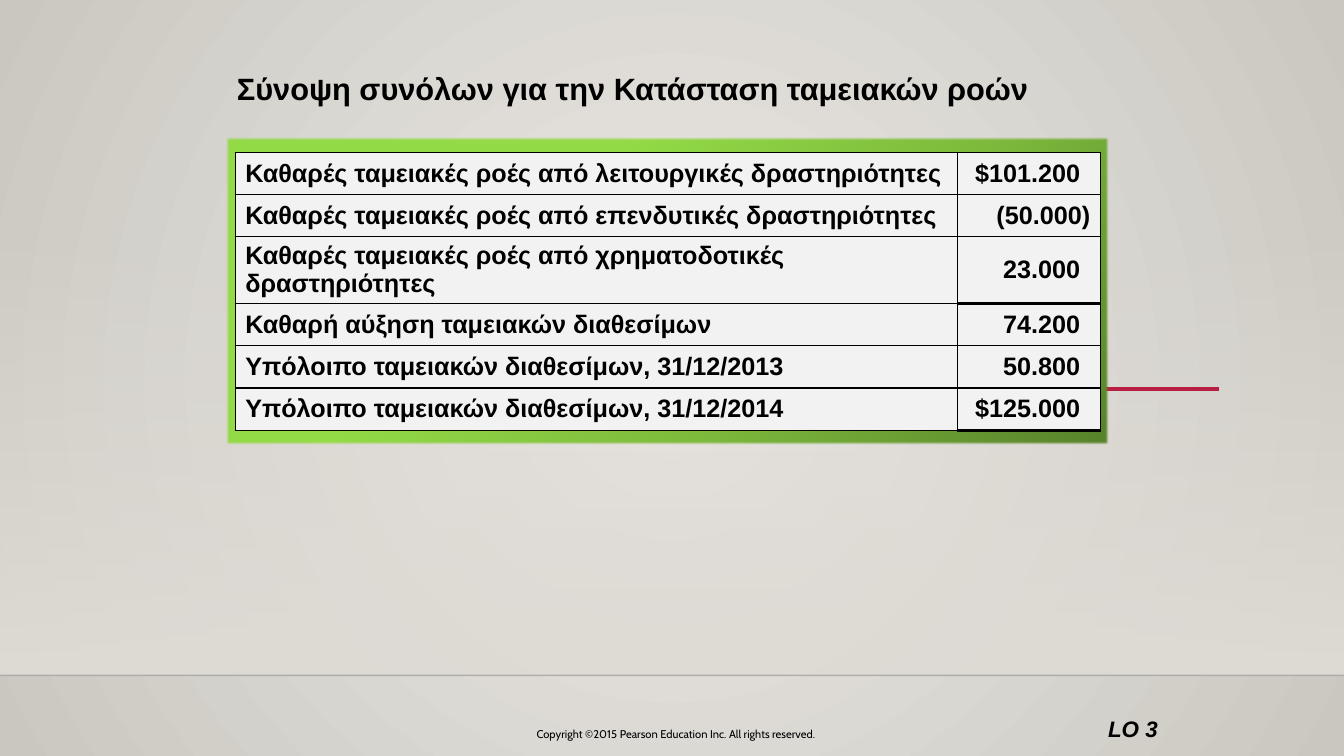
from pptx import Presentation
from pptx.dml.color import RGBColor
from pptx.enum.shapes import MSO_CONNECTOR, MSO_SHAPE
from pptx.enum.text import MSO_ANCHOR, MSO_AUTO_SIZE, PP_ALIGN
from pptx.oxml import parse_xml
from pptx.oxml.ns import nsdecls, qn
from pptx.util import Pt

STRAIGHT, RECT = MSO_CONNECTOR.STRAIGHT, MSO_SHAPE.RECTANGLE
LEFT, CENTER, RIGHT = PP_ALIGN.LEFT, PP_ALIGN.CENTER, PP_ALIGN.RIGHT
TOP, MIDDLE = MSO_ANCHOR.TOP, MSO_ANCHOR.MIDDLE
NO_AUTOFIT = MSO_AUTO_SIZE.NONE

BLACK = RGBColor(0x00, 0x00, 0x00)
CELL_GREY = RGBColor(0xF2, 0xF2, 0xF2)
CRIMSON = RGBColor(0xB7, 0x1E, 0x42)
PALE, STONE = RGBColor(0xEC, 0xEA, 0xE7), RGBColor(0xCA, 0xC7, 0xC1)
SAND = RGBColor(0xDF, 0xDB, 0xD5)
DARK_GREEN = RGBColor(0x57, 0x81, 0x2A)
MID_GREEN = RGBColor(0x7B, 0xB7, 0x3B)
LIME = RGBColor(0x92, 0xDA, 0x46)

WIDTH, HEIGHT = 960, 540
FLOOR_Y = 482.4
THIN, THICK = 1, 2.25
ROW_HEIGHT = 30.24
COLUMNS = (516, 102)

# Label, amount, right inset of the amount, rule below the amount
CASH_FLOWS = [
    ("Καθαρές ταμειακές ροές από λειτουργικές δραστηριότητες", "$101.200", 14.4, THIN),
    ("Καθαρές ταμειακές ροές από επενδυτικές δραστηριότητες", "(50.000)", 7.2, THIN),
    ("Καθαρές ταμειακές ροές από χρηματοδοτικές δραστηριότητες", "23.000", 14.4, THICK),
    ("Καθαρή αύξηση ταμειακών διαθεσίμων", "74.200", 14.4, THIN),
    ("Υπόλοιπο ταμειακών διαθεσίμων, 31/12/2013", "50.800", 14.4, THICK),
    ("Υπόλοιπο ταμειακών διαθεσίμων, 31/12/2014", "$125.000", 14.4, THICK),
]


def set_all(obj, **values):
    for name, value in values.items():
        setattr(obj, name, value)


def set_gradient(fill, owner, stops, direction):
    """Give owner a gradient of (position, colour, opacity) stops, in percent."""
    fill.gradient()
    grad = next(owner.iter(qn("a:gradFill")))
    for child in list(grad):
        grad.remove(child)
    marks = "".join(
        f'<a:gs pos="{pos * 1000}"><a:srgbClr val="{color}">'
        f'<a:alpha val="{opacity * 1000}"/></a:srgbClr></a:gs>'
        for pos, color, opacity in stops)
    grad.append(parse_xml(f'<a:gsLst {nsdecls("a")}>{marks}</a:gsLst>'))
    grad.append(parse_xml(direction))


def linear(angle):
    return f'<a:lin {nsdecls("a")} ang="{angle * 60000}" scaled="0"/>'


def set_border(cell, side, width):
    cell._tc.get_or_add_tcPr().append(parse_xml(
        f'<a:ln{side} {nsdecls("a")} w="{Pt(width)}"><a:solidFill>'
        f'<a:srgbClr val="{BLACK}"/></a:solidFill></a:ln{side}>'))


class SlideBuilder:
    def __init__(self, slide, font):
        self.slide = slide
        self.font = font

    def background(self, inner, outer):
        bg = self.slide.background
        circle = (f'<a:path {nsdecls("a")} path="circle">'
                  '<a:fillToRect l="50000" t="50000" r="50000" b="50000"/></a:path>')
        set_gradient(bg.fill, self.slide.element,
                     [(0, inner, 100), (100, outer, 100)], circle)

    def panel(self, x, y, w, h, stops, angle, soft_edge=0):
        sp = self.slide.shapes.add_shape(RECT, Pt(x), Pt(y), Pt(w), Pt(h))
        sp.shadow.inherit = False
        sp.line.fill.background()
        set_gradient(sp.fill, sp._element.spPr, stops, linear(angle))
        if soft_edge:
            sp._element.spPr.find(qn("a:effectLst")).append(parse_xml(
                f'<a:softEdge {nsdecls("a")} rad="{Pt(soft_edge)}"/>'))

    def rule(self, x1, x2, y, color, width, opacity=100):
        cn = self.slide.shapes.add_connector(STRAIGHT, Pt(x1), Pt(y), Pt(x2), Pt(y))
        cn.line.width = Pt(width)
        cn.line.color.rgb = color
        spPr = cn._element.spPr
        next(spPr.iter(qn("a:srgbClr"))).append(parse_xml(
            f'<a:alpha {nsdecls("a")} val="{opacity * 1000}"/>'))
        spPr.append(parse_xml(f'<a:effectLst {nsdecls("a")}/>'))

    def add_words(self, tf, text, size, align=LEFT, **font):
        p = tf.paragraphs[0]
        p.alignment = align
        r = p.add_run()
        r.text = text
        r.font.color.rgb = BLACK
        set_all(r.font, **{"name": self.font, "size": Pt(size), **font})
        return p

    def title(self, x, y, w, h, text, size):
        sp = self.slide.shapes.title
        set_all(sp, left=Pt(x), top=Pt(y), width=Pt(w), height=Pt(h))
        inset = Pt(7.2)
        set_all(sp.text_frame, word_wrap=True, auto_size=NO_AUTOFIT,
                vertical_anchor=TOP, margin_left=inset, margin_right=inset,
                margin_top=inset, margin_bottom=inset)
        self.add_words(sp.text_frame, text, size, bold=True).line_spacing = 1.25

    def text(self, x, y, w, h, text, size, align, **font):
        tf = self.slide.shapes.add_textbox(Pt(x), Pt(y), Pt(w), Pt(h)).text_frame
        tf.word_wrap = True
        self.add_words(tf, text, size, align, **font)

    def cell(self, cell, text, align, right_inset, top, bottom):
        set_all(cell, vertical_anchor=MIDDLE, margin_right=Pt(right_inset))
        for side, width in zip("LRTB", (THIN, THIN, top, bottom)):
            set_border(cell, side, width)
        cell.fill.solid()
        cell.fill.fore_color.rgb = CELL_GREY
        self.add_words(cell.text_frame, text, 18, align, bold=True)

    def table(self, x, y, rows):
        table = self.slide.shapes.add_table(
            len(rows), len(COLUMNS), Pt(x), Pt(y),
            Pt(sum(COLUMNS)), Pt(ROW_HEIGHT * len(rows))).table
        set_all(table, first_row=False, horz_banding=False)
        for column, width in zip(table.columns, COLUMNS):
            column.width = Pt(width)
        above = THIN
        for i, (label, amount, inset, below) in enumerate(rows):
            table.rows[i].height = Pt(ROW_HEIGHT)
            self.cell(table.cell(i, 0), label, LEFT, 7.2, THIN, THIN)
            self.cell(table.cell(i, 1), amount, RIGHT, inset, above, below)
            above = below


def main():
    prs = Presentation()
    prs.slide_width, prs.slide_height = Pt(WIDTH), Pt(HEIGHT)
    s = SlideBuilder(prs.slides.add_slide(prs.slide_layouts[5]), "Arial")

    s.background(PALE, STONE)
    s.panel(0, 159, WIDTH, FLOOR_Y - 159, [(0, SAND, 0), (100, SAND, 100)], 90)
    s.rule(0, WIDTH, FLOOR_Y, BLACK, 1, opacity=20)
    s.rule(190, 870.5, 278, CRIMSON, 2.5)

    s.title(162, 36, 654, 44.6, "Σύνοψη συνόλων για την Κατάσταση ταμειακών ροών", 22)
    s.panel(162, 98, 630, 219.6,
            [(0, DARK_GREEN, 100), (33, MID_GREEN, 100), (65, LIME, 100)],
            225, soft_edge=1)
    s.table(168, 108.7, CASH_FLOWS)

    s.text(774, 507, 60, 26.6, "LO 3", 16, RIGHT, bold=True, italic=True)
    s.text(312, 516, 342, 18,
           "Copyright ©2015 Pearson Education Inc. All rights reserved.",
           8, CENTER, name="Cabin")
    prs.save("out.pptx")


if __name__ == "__main__":
    main()
